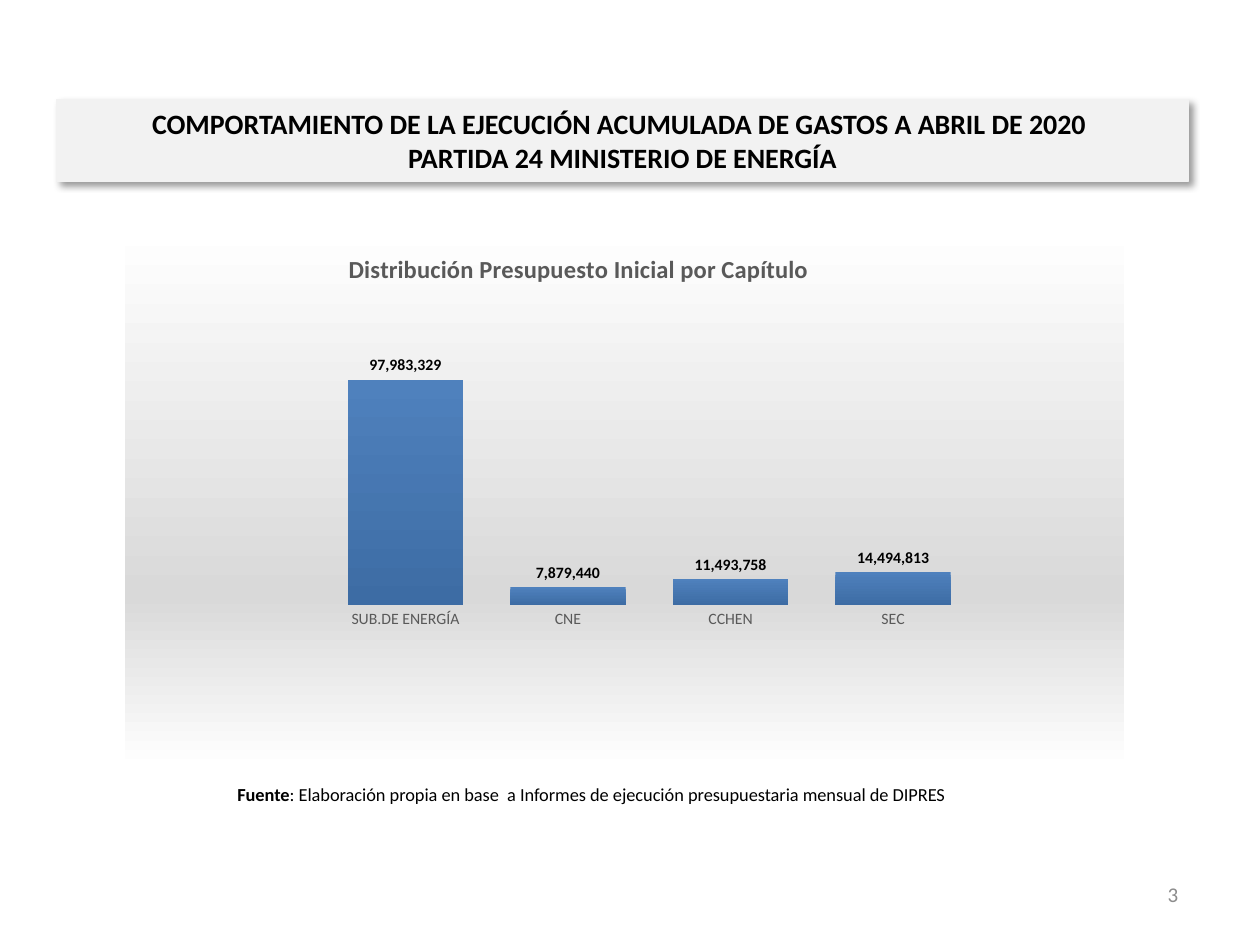
import pptx
import pptx.chart.data
import pptx.dml.color
import pptx.enum.chart
import pptx.enum.shapes
import pptx.enum.text
import pptx.oxml
import pptx.oxml.ns
import pptx.util

Inches = pptx.util.Inches
Pt = pptx.util.Pt
RGBColor = pptx.dml.color.RGBColor
ALIGN = pptx.enum.text.PP_ALIGN

FONT = "Calibri"
BLACK = RGBColor(0, 0, 0)
WHITE = RGBColor(255, 255, 255)
PALE_GRAY = RGBColor(0xF2, 0xF2, 0xF2)
MID_GRAY = RGBColor(0xD9, 0xD9, 0xD9)
NUMBER_GRAY = RGBColor(0x8C, 0x8C, 0x8C)
LABEL_GRAY = RGBColor(0x59, 0x59, 0x59)
BAR_TOP = RGBColor(0x4F, 0x81, 0xBD)
BAR_BOTTOM = RGBColor(0x3D, 0x6C, 0xA4)

BUDGETS = {
    "SUB.DE ENERGÍA": 97983329,
    "CNE": 7879440,
    "CCHEN": 11493758,
    "SEC": 14494813,
}


def style_font(font, size, color, bold=False):
    font.name = FONT
    font.size = Pt(size)
    font.bold = bold
    font.color.rgb = color


def write_text(frame, lines, size=12, color=BLACK, align=ALIGN.CENTER):
    frame.word_wrap = True
    frame.vertical_anchor = pptx.enum.text.MSO_ANCHOR.MIDDLE
    paragraph = frame.paragraphs[0]
    paragraph.alignment = align
    for index, line in enumerate(lines):
        if index:
            paragraph.add_line_break()
        for text, bold in line:
            run = paragraph.add_run()
            run.text = text
            style_font(run.font, size, color, bold)


def add_label(slide, left, top, width, height, lines, **text_format):
    label = slide.shapes.add_textbox(
        Inches(left), Inches(top), Inches(width), Inches(height))
    write_text(label.text_frame, lines, **text_format)


def add_banner(slide, lines):
    banner = slide.shapes.add_shape(
        pptx.enum.shapes.MSO_SHAPE.RECTANGLE,
        Inches(0.45), Inches(0.79), Inches(8.98), Inches(0.65))
    banner.fill.solid()
    banner.fill.fore_color.rgb = PALE_GRAY
    banner.line.color.rgb = PALE_GRAY
    banner.line.width = Pt(0.75)
    banner.shadow.inherit = False
    effects = banner.fill._xPr.find(pptx.oxml.ns.qn("a:effectLst"))
    effects.append(pptx.oxml.parse_xml(
        f'<a:outerShdw {pptx.oxml.ns.nsdecls("a")} blurRad="{Pt(4)}" '
        f'dist="{Pt(3)}" dir="2700000" algn="tl" rotWithShape="0">'
        '<a:srgbClr val="000000"><a:alpha val="40000"/></a:srgbClr>'
        '</a:outerShdw>'))
    write_text(banner.text_frame, lines, size=16)


def add_gradient_after(element, stops, border=None):
    stop_xml = "".join(
        f'<a:gs pos="{percent * 1000}"><a:srgbClr val="{color}"/></a:gs>'
        for percent, color in stops)
    line_fill = (f'<a:solidFill><a:srgbClr val="{border}"/></a:solidFill>'
                 if border else '<a:noFill/>')
    element.addnext(pptx.oxml.parse_xml(
        f'<c:spPr {pptx.oxml.ns.nsdecls("c", "a")}><a:gradFill><a:gsLst>'
        f'{stop_xml}</a:gsLst><a:lin ang="5400000" scaled="0"/></a:gradFill>'
        f'<a:ln w="{Pt(0.75)}">{line_fill}</a:ln></c:spPr>'))


def set_layout(parent, position, inner=False):
    for layout in parent.findall(pptx.oxml.ns.qn("c:layout")):
        parent.remove(layout)
    target = '<c:layoutTarget val="inner"/>' if inner else ""
    modes = "".join(f'<c:{key}Mode val="edge"/>' for key in "xy")
    values = "".join(
        f'<c:{key} val="{value}"/>' for key, value in position.items())
    layout = pptx.oxml.parse_xml(
        f'<c:layout {pptx.oxml.ns.nsdecls("c")}><c:manualLayout>'
        f'{target}{modes}{values}</c:manualLayout></c:layout>')
    text = parent.find(pptx.oxml.ns.qn("c:tx"))
    if text is None:
        parent.insert(0, layout)
    else:
        text.addnext(layout)


def add_budget_chart(slide):
    budget_data = pptx.chart.data.CategoryChartData(number_format="#,##0")
    budget_data.categories = list(BUDGETS)
    budget_data.add_series("Series 1", list(BUDGETS.values()))
    chart = slide.shapes.add_chart(
        pptx.enum.chart.XL_CHART_TYPE.COLUMN_CLUSTERED,
        Inches(0.98), Inches(1.79), Inches(7.95), Inches(4.31),
        budget_data).chart
    style_font(chart.font, 10, BLACK)
    chart.has_legend = False
    chart.has_title = True
    write_text(chart.chart_title.text_frame,
               [[("Distribución Presupuesto Inicial por Capítulo", True)]],
               size=14, color=LABEL_GRAY)
    set_layout(chart.chart_title._element, {"x": 0.22, "y": 0.04})

    capitulos = chart.category_axis
    capitulos.major_tick_mark = pptx.enum.chart.XL_TICK_MARK.NONE
    capitulos.format.line.fill.background()
    style_font(capitulos.tick_labels.font, 9, LABEL_GRAY)
    amounts = chart.value_axis
    amounts.minimum_scale = 0
    amounts.maximum_scale = 120000000
    amounts.has_major_gridlines = False
    amounts.visible = False

    plot = chart.plots[0]
    plot.gap_width = 41
    plot.vary_by_categories = False
    bars = plot.series[0]
    add_gradient_after(bars._element.find(pptx.oxml.ns.qn("c:tx")),
                       [(0, BAR_TOP), (100, BAR_BOTTOM)])
    labels = bars.data_labels
    labels.show_value = True
    labels.number_format = "#,##0"
    labels.number_format_is_linked = False
    labels.position = pptx.enum.chart.XL_LABEL_POSITION.OUTSIDE_END
    style_font(labels.font, 9, BLACK, bold=True)

    chart_root = chart._chartSpace.chart
    set_layout(chart_root.plotArea,
               {"x": 0.2, "y": 0.19, "w": 0.65, "h": 0.51}, inner=True)
    add_gradient_after(chart_root, [(0, WHITE), (68, MID_GRAY), (100, WHITE)],
                       border=WHITE)


def main():
    presentation = pptx.Presentation()
    presentation.slide_width = Inches(10)
    presentation.slide_height = Inches(7.5)
    slide = presentation.slides.add_slide(presentation.slide_layouts[6])
    add_label(slide, 7.12, 6.9, 2.33, 0.4, [[("3", False)]],
              color=NUMBER_GRAY, align=ALIGN.RIGHT)
    add_banner(slide, [
        [("COMPORTAMIENTO DE LA EJECUCIÓN ACUMULADA DE GASTOS A ABRIL DE 2020 ",
          True)],
        [("PARTIDA 24 MINISTERIO DE ENERGÍA", True)],
    ])
    add_label(slide, 0.98, 6.1, 7.43, 0.4, [[
        ("Fuente", True),
        (": Elaboración propia en base  a Informes de ejecución "
         "presupuestaria mensual de DIPRES", False),
    ]], size=10.5)
    add_budget_chart(slide)
    presentation.save("out.pptx")


if __name__ == "__main__":
    main()
